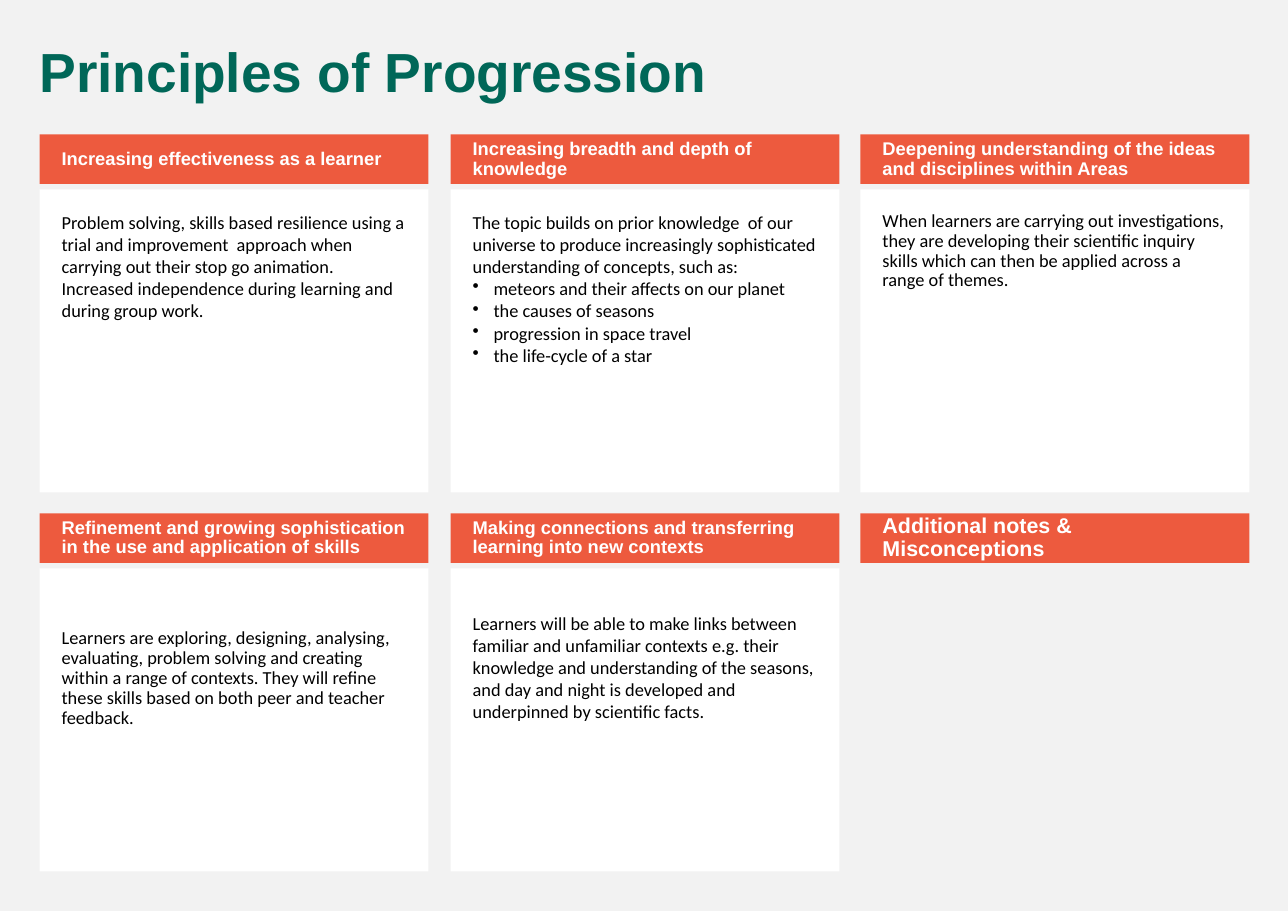
import pptx
import pptx.dml.color
import pptx.enum.shapes
import pptx.enum.text
import pptx.util
import lxml.etree

Inches = pptx.util.Inches
Pt = pptx.util.Pt
ANCHOR = pptx.enum.text.MSO_ANCHOR


def color(hex_code):
    return pptx.dml.color.RGBColor.from_string(hex_code)


def write_text(box, lines, margins, anchor, spacing, font):
    frame = box.text_frame
    sides = ("margin_left", "margin_top", "margin_right", "margin_bottom")
    frame_format = dict(zip(sides, map(Inches, margins)))
    frame_format.update(word_wrap=True, vertical_anchor=anchor)
    for name, value in frame_format.items():
        setattr(frame, name, value)
    for index, line in enumerate(lines):
        para = frame.paragraphs[0] if index == 0 else frame.add_paragraph()
        para.alignment = pptx.enum.text.PP_ALIGN.LEFT
        para.line_spacing = spacing
        span = para.add_run()
        span.text = line.removeprefix("• ")
        for name, value in font.items():
            setattr(span.font, name, value)
        span.font.color.rgb = color(font_colors[font["name"], font["size"]])
        if line.startswith("• "):
            properties = para._p.get_or_add_pPr()
            properties.set("marL", str(Inches(0.19)))
            properties.set("indent", str(-Inches(0.19)))
            bullet = lxml.etree.SubElement(properties, pptx.oxml.ns.qn("a:buChar"))
            bullet.set("char", "•")


font_colors = {
    ("Arial", Pt(36)): "006758",
    ("Arial", Pt(14)): "FFFFFF",
    ("Arial", Pt(12)): "FFFFFF",
    ("Calibri", Pt(12)): "000000",
}

deck = pptx.Presentation()
deck.slide_width = Inches(11.69)
deck.slide_height = Inches(8.27)
page = deck.slides.add_slide(deck.slide_layouts[6])
page.background.fill.solid()
page.background.fill.fore_color.rgb = color("F2F2F2")

title = page.shapes.add_textbox(Inches(0.26), Inches(0.36), Inches(11.08), Inches(0.65))
title_font = {"name": "Arial", "size": Pt(36), "bold": True}
write_text(title, ["Principles of Progression"], (0.1, 0.05, 0.1, 0.05), ANCHOR.TOP, 0.9, title_font)

column_lefts = (0.36, 4.09, 7.81)
row_tops = (1.22, 4.66)
card_width = 3.53
heading_height = 0.45
body_offset = 0.5
body_height = 2.75

cards = [
    ("Increasing effectiveness as a learner", 12, 0.2, 1.0, [
        "Problem solving, skills based resilience using a trial and improvement  approach "
        "when carrying out their stop go animation.",
        "Increased independence during learning and during group work.",
    ]),
    ("Increasing breadth and depth of knowledge", 12, 0.2, 1.0, [
        "The topic builds on prior knowledge  of our universe to produce increasingly "
        "sophisticated understanding of concepts, such as:",
        "• meteors and their affects on our planet",
        "• the causes of seasons",
        "• progression in space travel",
        "• the life-cycle of a star",
    ]),
    ("Deepening understanding of the ideas and disciplines within Areas", 12, 0.2, 0.9, [
        "When learners are carrying out investigations, they are developing their scientific "
        "inquiry skills which can then be applied across a range of themes.",
    ]),
    ("Refinement and growing sophistication in the use and application of skills", 12, 0.55, 0.9, [
        "Learners are exploring, designing, analysing, evaluating, problem solving and creating "
        "within a range of contexts. They will refine these skills based on both peer and "
        "teacher feedback.",
    ]),
    ("Making connections and transferring learning into new contexts", 12, 0.4, 1.0, [
        "Learners will be able to make links between familiar and unfamiliar contexts e.g. their "
        "knowledge and understanding of the seasons, and day and night is developed and "
        "underpinned by scientific facts.",
    ]),
    ("Additional notes & Misconceptions", 14, 0.2, 1.0, []),
]

for index, (heading, heading_size, body_margin, body_spacing, body_lines) in enumerate(cards):
    row, column = divmod(index, len(column_lefts))
    left, top = column_lefts[column], row_tops[row]
    heading_font = {"name": "Arial", "size": Pt(heading_size), "bold": True}
    body_font = {"name": "Calibri", "size": Pt(12), "bold": False}
    parts = [
        (top, heading_height, "ED5A3E", [heading], (0.2, 0.05, 0.1, 0.05), ANCHOR.MIDDLE, 0.9, heading_font),
        (top + body_offset, body_height, "FFFFFF", body_lines, (0.2, body_margin, 0.2, 0.2),
         ANCHOR.TOP, body_spacing, body_font),
    ]
    for part_top, height, fill, lines, *text_format in parts:
        if lines:
            box = page.shapes.add_shape(
                pptx.enum.shapes.MSO_SHAPE.RECTANGLE,
                Inches(left), Inches(part_top), Inches(card_width), Inches(height))
            box.shadow.inherit = False
            box.fill.solid()
            box.fill.fore_color.rgb = color(fill)
            box.line.fill.background()
            write_text(box, lines, *text_format)

deck.save("out.pptx")
